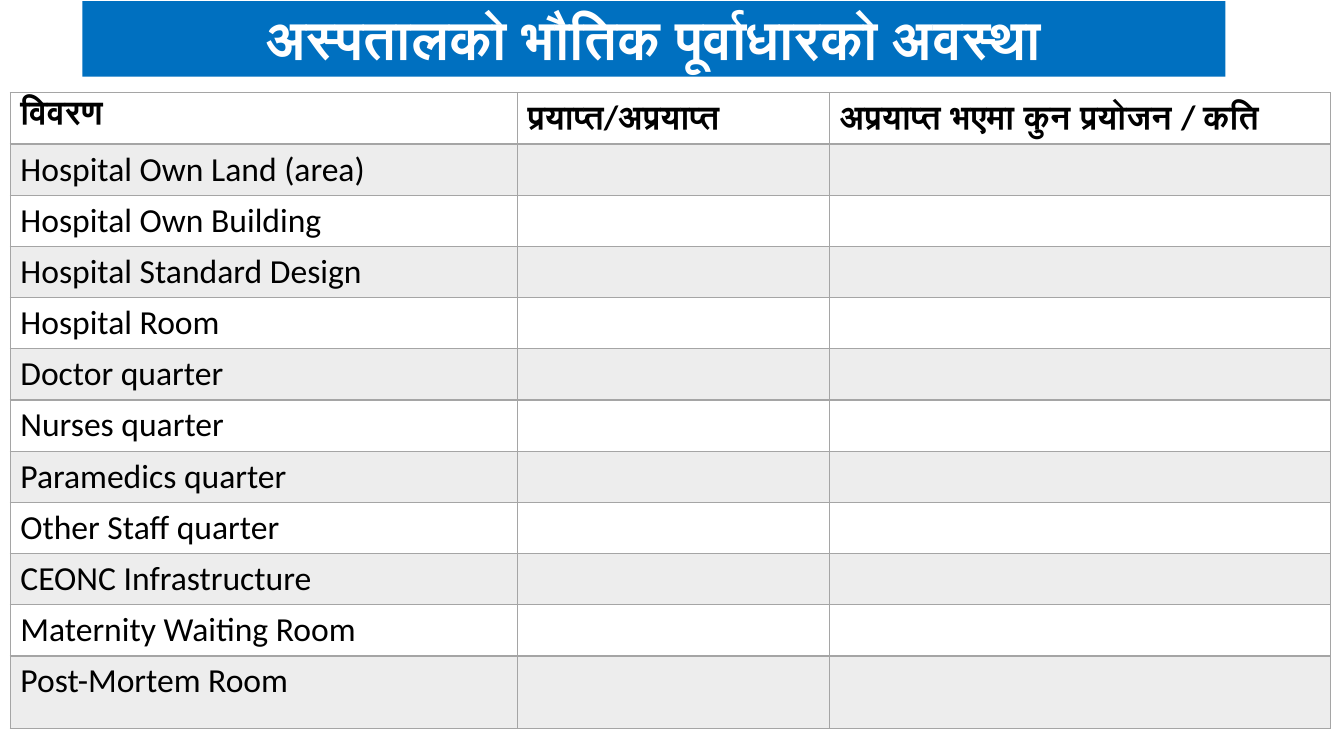
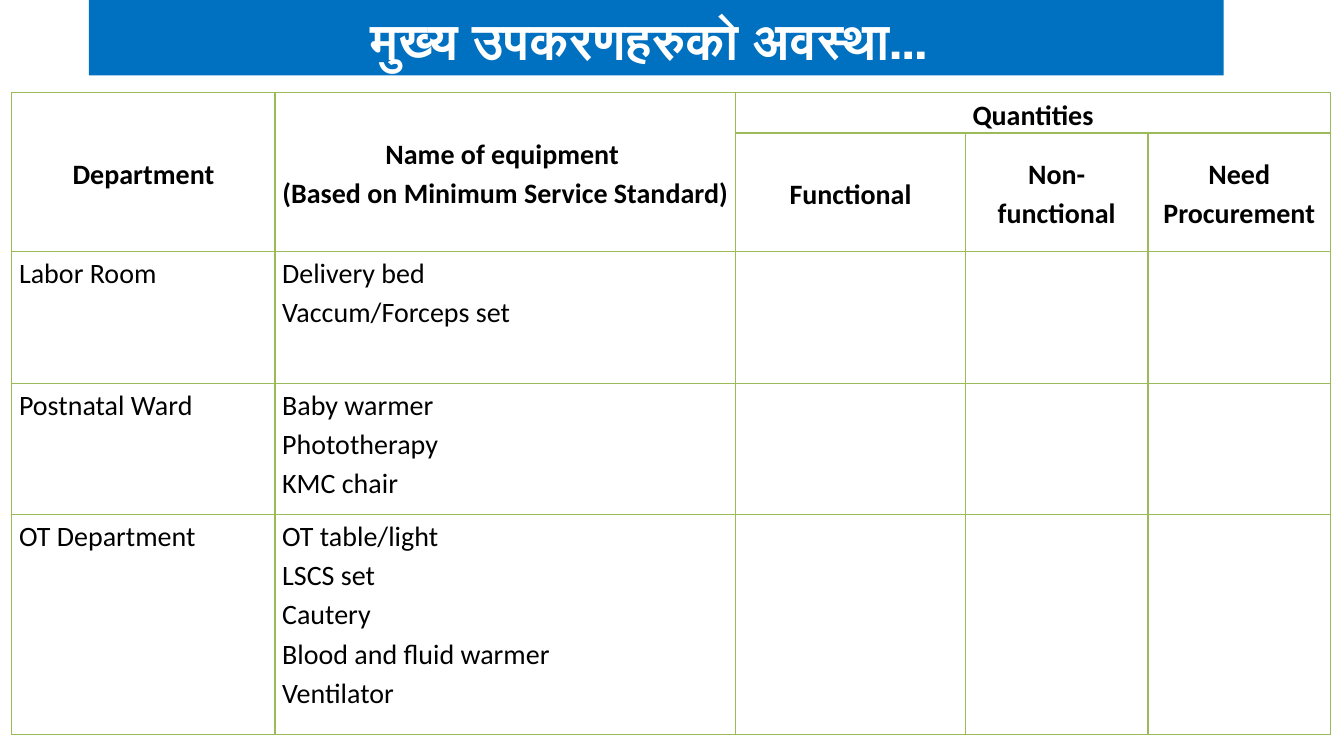
from dataclasses import dataclass

from lxml.etree import SubElement
from pptx import Presentation
from pptx.dml.color import RGBColor as RGB
from pptx.enum.shapes import MSO_SHAPE as Shape
from pptx.enum.text import MSO_ANCHOR as Anchor, PP_ALIGN as Align
from pptx.oxml.ns import qn
from pptx.util import Cm, Pt


@dataclass(frozen=True)
class Theme:
    white: str = "FFFFFF"
    black: str = "000000"
    banner: str = "0070C0"
    grey_line: str = "A5A5A5"
    grey_band: str = "EDEDED"
    green_line: str = "9BBB59"
    title_font: str = "Roboto"
    body_font: str = "Calibri"
    long_title_size: int = 39
    title_size: int = 36
    list_size: int = 24
    grid_size: int = 20


THEME = Theme()

INFRASTRUCTURE_HEADS = ("विवरण", "प्रयाप्त/अप्रयाप्त", "अप्रयाप्त भएमा कुन प्रयोजन / कति")
INFRASTRUCTURE = (
    "Hospital Own Land (area)", "Hospital Own Building", "Hospital Standard Design",
    "Hospital Room", "Doctor quarter", "Nurses quarter", "Paramedics quarter",
    "Other Staff quarter", "CEONC Infrastructure", "Maternity Waiting Room",
    "Post-Mortem Room",
)

# Heading text with its first and last grid cell
EQUIPMENT_HEADS = (
    ("Department", (0, 0), (1, 0)),
    ("Name of equipment \n(Based on Minimum Service Standard)", (0, 1), (1, 1)),
    ("Quantities", (0, 2), (0, 4)),
    ("Functional", (1, 2), (1, 2)),
    ("Non- functional", (1, 3), (1, 3)),
    ("Need Procurement", (1, 4), (1, 4)),
)
EQUIPMENT = (
    ("Labor Room", "Delivery bed\nVaccum/Forceps set"),
    ("Postnatal Ward", "Baby warmer\nPhototherapy\nKMC chair"),
    ("OT Department", "OT table/light\nLSCS set\nCautery\nBlood and fluid warmer\nVentilator"),
)


def apply(target, values):
    for name, value in values.items():
        setattr(target, name, value)


def write(frame, text, font, color, layout):
    """Fill a text frame, one paragraph per line of text."""
    for index, line in enumerate(text.split("\n")):
        para = frame.add_paragraph() if index else frame.paragraphs[0]
        apply(para, layout)
        span = para.add_run()
        span.text = line
        apply(span.font, font)
        span.font.color.rgb = RGB.from_string(color)


def add_banner(slide, text, size, left, top, width):
    box = slide.shapes.add_shape(Shape.RECTANGLE, Cm(left), Cm(top), Cm(width), Cm(1.9))
    box.shadow.inherit = False
    box.fill.solid()
    box.fill.fore_color.rgb = RGB.from_string(THEME.banner)
    box.line.fill.background()
    apply(box.text_frame, {"word_wrap": True, "vertical_anchor": Anchor.BOTTOM})
    write(box.text_frame, text,
          {"name": THEME.title_font, "size": Pt(size), "bold": True},
          THEME.white, {"alignment": Align.CENTER, "line_spacing": 0.9})


def set_borders(cell, color, top=1, bottom=1):
    properties = cell._tc.get_or_add_tcPr()
    for side, width in (("L", 1), ("R", 1), ("T", top), ("B", bottom)):
        line = SubElement(properties, qn(f"a:ln{side}"), w=str(Pt(width)))
        fill = SubElement(line, qn("a:solidFill"))
        SubElement(fill, qn("a:srgbClr"), val=color)


def add_grid(slide, left, widths, heights):
    """Add a table without the banded style, sized in centimetres."""
    table = slide.shapes.add_table(
        len(heights), len(widths), Cm(left), Cm(2.34),
        Cm(sum(widths)), Cm(sum(heights))).table
    apply(table, {"first_row": False, "horz_banding": False})
    for column, width in zip(table.columns, widths):
        column.width = Cm(width)
    for row, height in zip(table.rows, heights):
        row.height = Cm(height)
    return table


def write_cell(cell, text, size, bold=False, **layout):
    font = {"name": THEME.body_font, "size": Pt(size), "bold": bold}
    write(cell.text_frame, text, font, THEME.black, layout)


def build_infrastructure(slide):
    add_banner(slide, "अस्पतालको भौतिक पूर्वाधारको अवस्था",
               THEME.long_title_size, 2.08, 0.03, 28.8)
    heights = [1.29] * len(INFRASTRUCTURE) + [1.83]
    table = add_grid(slide, 0.26, (12.78, 7.87, 12.62), heights)

    # Heavy rule under the heading, grey on every odd row
    for index, row in enumerate(table.rows):
        for cell in row.cells:
            set_borders(cell, THEME.grey_line, top=2 if index == 1 else 1,
                        bottom=2 if index == 0 else 1)
            if index % 2:
                cell.fill.solid()
                cell.fill.fore_color.rgb = RGB.from_string(THEME.grey_band)
            else:
                cell.fill.background()

    for column, text in enumerate(INFRASTRUCTURE_HEADS):
        write_cell(table.cell(0, column), text, THEME.list_size, bold=True)
    for row, text in enumerate(INFRASTRUCTURE, start=1):
        write_cell(table.cell(row, 0), text, THEME.list_size)


def build_equipment(slide):
    add_banner(slide, "मुख्य उपकरणहरुको अवस्था… ", THEME.title_size, 2.24, 0, 28.6)
    table = add_grid(slide, 0.3, (6.63, 11.61, 5.79, 4.6, 4.6),
                     (1.01, 2.98, 3.33, 3.3, 5.54))
    margins = {"margin_left": Cm(0.18), "margin_right": Cm(0.18),
               "margin_top": 0, "margin_bottom": 0}
    for cell in table.iter_cells():
        set_borders(cell, THEME.green_line)
        cell.fill.background()
        apply(cell, margins)

    # Two-level heading
    for text, first, last in EQUIPMENT_HEADS:
        cell = table.cell(*first)
        if first != last:
            cell.merge(table.cell(*last))
        cell.vertical_anchor = Anchor.MIDDLE
        write_cell(cell, text, THEME.grid_size, bold=True,
                   alignment=Align.CENTER, line_spacing=1.15)

    # Departments and their equipment
    for row, texts in enumerate(EQUIPMENT, start=2):
        for column, text in enumerate(texts):
            write_cell(table.cell(row, column), text, THEME.grid_size, line_spacing=1.15)


def main():
    deck = Presentation()
    apply(deck, {"slide_width": Cm(33.87), "slide_height": Cm(19.05)})
    background = deck.slide_master.background.fill
    background.solid()
    background.fore_color.rgb = RGB.from_string(THEME.white)
    blank = deck.slide_layouts[6]
    for build in (build_infrastructure, build_equipment):
        build(deck.slides.add_slide(blank))
    deck.save("out.pptx")


if __name__ == "__main__":
    main()
